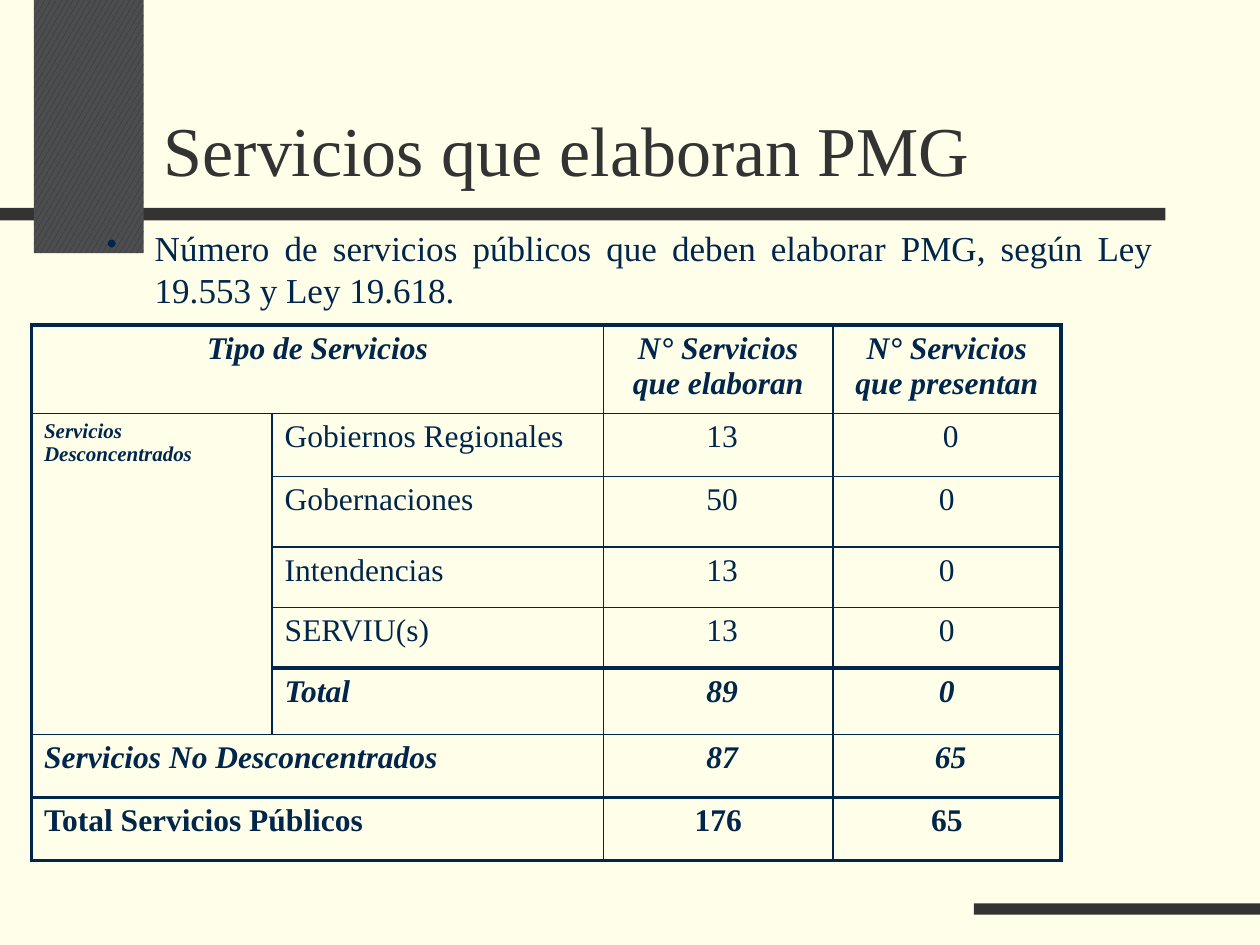
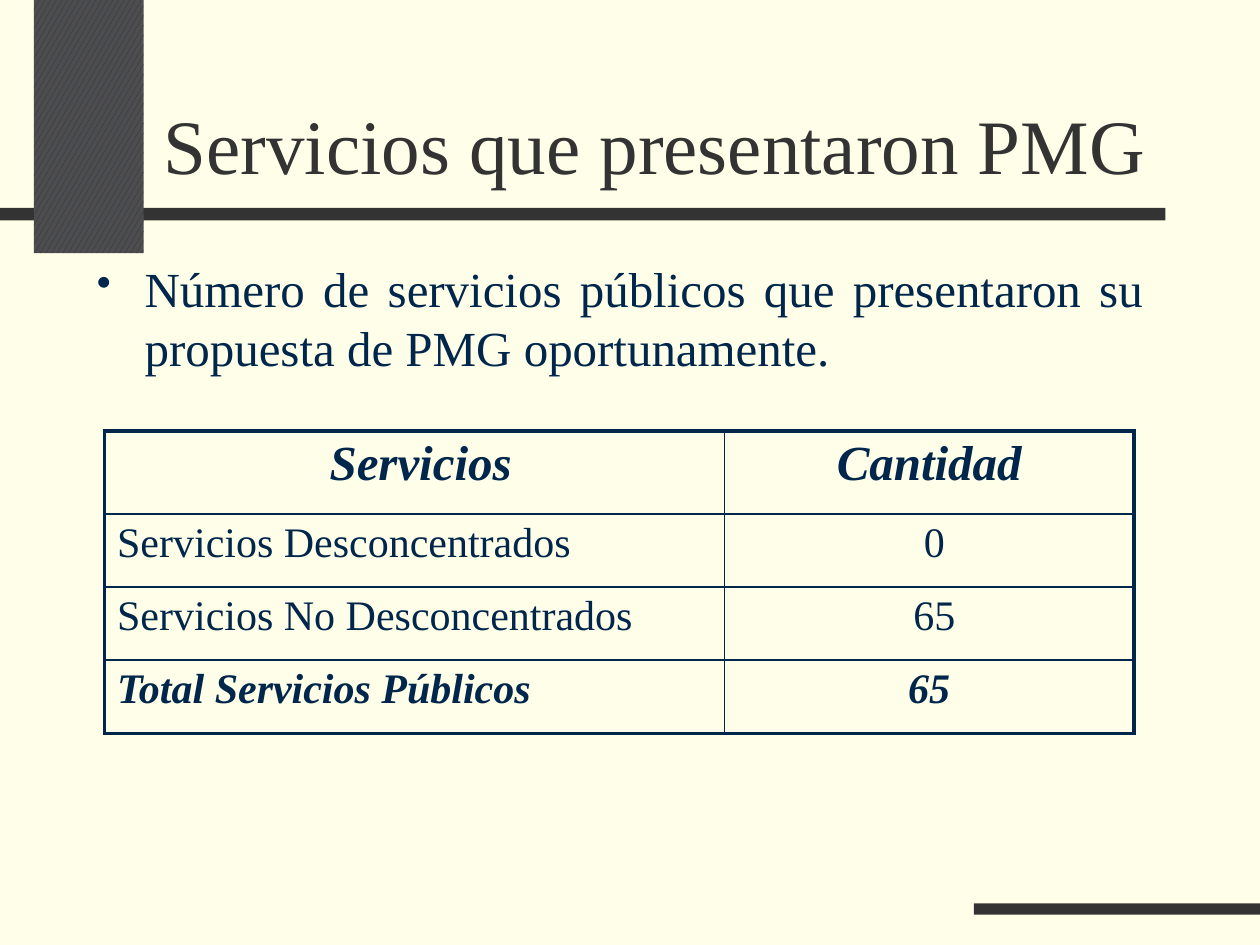
from lxml import etree
from pptx import Presentation
from pptx.dml.color import RGBColor
from pptx.enum.dml import MSO_PATTERN
from pptx.enum.shapes import MSO_SHAPE
from pptx.enum.text import MSO_ANCHOR, MSO_AUTO_SIZE, PP_ALIGN
from pptx.oxml.ns import qn
from pptx.util import Inches, Pt

RECT = MSO_SHAPE.RECTANGLE
CONFETTI = MSO_PATTERN.LARGE_CONFETTI
BOTTOM = MSO_ANCHOR.BOTTOM
NO_FIT = MSO_AUTO_SIZE.NONE
LEFT, CENTER, JUSTIFY = PP_ALIGN.LEFT, PP_ALIGN.CENTER, PP_ALIGN.JUSTIFY

FONT = "Times New Roman"
COLORS = {
    "background": "FFFFE9",
    "bar": "333333",
    "text": "00264C",
    "pattern_fore": "262D4C",
    "pattern_back": "4D4D4D",
}
THIN, THICK = 1, 2.25
PLAIN, BOLD, BOLD_ITALIC = (False, False), (True, False), (True, True)


def color(name):
    return RGBColor.from_string(COLORS[name])


class Deck:
    def __init__(self):
        self.prs = Presentation()
        self.prs.slide_width, self.prs.slide_height = Inches(10), Inches(7.5)
        fill = self.prs.slide_master.background.fill
        fill.solid()
        fill.fore_color.rgb = color("background")
        self.s = None

    def slide(self, title, size):
        self.s = self.prs.slides.add_slide(self.prs.slide_layouts[5])
        self.bar(0, 1.65, 9.25, 0.1)
        self.bar(0.27, 0, 0.87, 2.01, patterned=True)
        self.bar(7.73, 7.17, 2.27, 0.09)
        sp = self.s.shapes.title
        sp.left, sp.top = Inches(1.2), Inches(0.31)
        sp.width, sp.height = Inches(8.5), Inches(1.25)
        tf = sp.text_frame
        tf.auto_size = NO_FIT
        tf.vertical_anchor = BOTTOM
        self.set_text(tf, title, size, PLAIN, LEFT, "bar")

    def bar(self, x, y, w, h, patterned=False):
        sp = self.s.shapes.add_shape(RECT, Inches(x), Inches(y), Inches(w), Inches(h))
        sp.shadow.inherit = False
        sp.line.fill.background()
        if patterned:
            sp.fill.patterned()
            sp.fill.pattern = CONFETTI
            sp.fill.fore_color.rgb = color("pattern_fore")
            sp.fill.back_color.rgb = color("pattern_back")
        else:
            sp.fill.solid()
            sp.fill.fore_color.rgb = color("bar")

    def set_text(self, tf, text, size, style, align, ink="text"):
        tf.text = text
        p = tf.paragraphs[0]
        p.alignment = align
        for r in p.runs:
            r.font.name, r.font.size = FONT, Pt(size)
            r.font.bold, r.font.italic = style
            r.font.color.rgb = color(ink)

    def bullet(self, x, y, text, size):
        sp = self.s.shapes.add_textbox(Inches(x), Inches(y), Inches(8.5), Inches(4.92))
        tf = sp.text_frame
        tf.word_wrap = True
        self.set_text(tf, text, size, PLAIN, JUSTIFY)
        pPr = tf.paragraphs[0]._p.get_or_add_pPr()
        pPr.set("marL", str(Inches(0.38)))
        pPr.set("indent", str(-Inches(0.38)))
        etree.SubElement(pPr, qn("a:buSzPct")).set("val", "85000")
        etree.SubElement(pPr, qn("a:buChar")).set("char", "•")

    def borders(self, cell, widths):
        tcPr = cell._tc.get_or_add_tcPr()
        for side, width in zip("LRTB", widths):
            ln = etree.SubElement(tcPr, qn("a:ln" + side), w=str(Pt(width)))
            fill = etree.SubElement(ln, qn("a:solidFill"))
            etree.SubElement(fill, qn("a:srgbClr")).set("val", COLORS["text"])

    def table(self, x, y, cols, rows, labels, merges=(), thick_above=(), special=None):
        special = special or {}
        n_rows, n_cols = len(rows), len(cols)
        height = sum(row[0] for row in rows)
        frame = self.s.shapes.add_table(n_rows, n_cols, Inches(x), Inches(y),
                                        Inches(sum(cols)), Inches(height))
        table = frame.table
        table.first_row = table.horz_banding = False
        for column, width in zip(table.columns, cols):
            column.width = Inches(width)
        for r1, c1, r2, c2 in merges:
            table.cell(r1, c1).merge(table.cell(r2, c2))
        thick_rows = {0, n_rows, *thick_above}
        for i, (row_height, size, style, texts) in enumerate(rows):
            table.rows[i].height = Inches(row_height)
            for j, text in enumerate(texts):
                cell = table.cell(i, j)
                if cell.is_spanned:
                    continue
                below, after = i + 1, j + 1
                if cell.is_merge_origin:
                    below, after = i + cell.span_height, j + cell.span_width
                self.borders(cell, [
                    THICK if j == 0 else THIN,
                    THICK if after == n_cols else THIN,
                    THICK if i in thick_rows else THIN,
                    THICK if below in thick_rows else THIN,
                ])
                cell.fill.solid()
                cell.fill.fore_color.rgb = color("background")
                cell_size, cell_style = special.get((i, j), (size, style))
                align = CENTER if i == 0 or j >= labels else LEFT
                self.set_text(cell.text_frame, text, cell_size, cell_style, align)


def main():
    deck = Deck()

    deck.slide("Servicios que elaboran PMG", 40)
    deck.bullet(0.75, 1.75, "Número de servicios públicos que deben elaborar PMG, "
                "según Ley 19.553 y Ley 19.618.", 20)
    deck.table(
        0.25, 2.58, [1.91, 2.63, 1.82, 1.81],
        [
            (0.66, 18, BOLD_ITALIC, ["Tipo de Servicios", "", "N° Servicios que elaboran",
                                     "N° Servicios que presentan"]),
            (0.5, 18, PLAIN, ["Servicios Desconcentrados", "Gobiernos Regionales", " 13", " 0"]),
            (0.56, 18, PLAIN, ["", "Gobernaciones", " 50", "0"]),
            (0.48, 18, PLAIN, ["", "Intendencias", " 13", "0"]),
            (0.48, 18, PLAIN, ["", "SERVIU(s)", " 13", "0"]),
            (0.53, 18, BOLD_ITALIC, ["", "Total", " 89", "0"]),
            (0.5, 18, BOLD_ITALIC, ["Servicios No Desconcentrados", "", " 87", " 65"]),
            (0.5, 18, BOLD, ["Total Servicios Públicos", "", "176", "65"]),
        ],
        labels=2,
        merges=[(0, 0, 0, 1), (1, 0, 5, 0), (6, 0, 6, 1), (7, 0, 7, 1)],
        thick_above=[5, 7],
        special={(1, 0): (12, BOLD_ITALIC)},
    )

    deck.slide("Servicios que presentaron PMG", 44)
    deck.bullet(0.67, 2, "Número de servicios públicos que presentaron su "
                "propuesta de PMG oportunamente.", 28)
    deck.table(
        0.83, 3.42, [4.92, 3.25],
        [
            (0.66, 28, BOLD_ITALIC, [" Servicios", "Cantidad"]),
            (0.58, 24, PLAIN, ["Servicios Desconcentrados", " 0"]),
            (0.58, 24, PLAIN, ["Servicios No Desconcentrados", " 65"]),
            (0.58, 24, BOLD_ITALIC, ["Total Servicios Públicos", "65"]),
        ],
        labels=1,
    )

    deck.prs.save("out.pptx")


if __name__ == "__main__":
    main()
